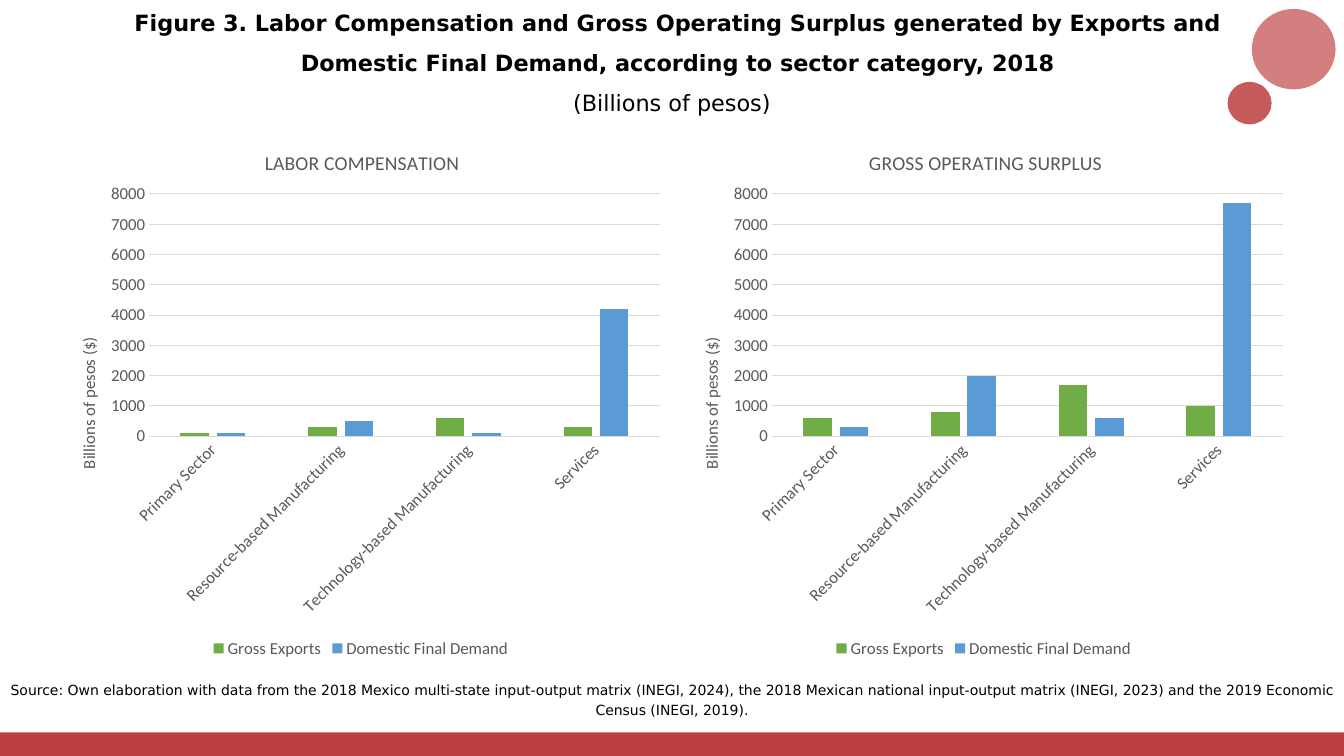
from lxml import etree
from pptx import Presentation
from pptx.chart.data import CategoryChartData
from pptx.dml.color import RGBColor
from pptx.enum.chart import XL_CHART_TYPE as ChartType, XL_LEGEND_POSITION as LegendPosition
from pptx.enum.chart import XL_TICK_MARK as TickMark
from pptx.enum.shapes import MSO_SHAPE as Shape
from pptx.enum.text import MSO_AUTO_SIZE as AutoSize, PP_ALIGN as Align
from pptx.oxml.ns import qn
from pptx.util import Pt

GRAY, GRID, RED = "595959", "D9D9D9", "A80000"
CATEGORIES = ["Primary Sector", "Resource-based Manufacturing",
              "Technology-based Manufacturing", "Services"]


def color(hex_value):
    return RGBColor.from_string(hex_value)


def set_layout(element, index, **fractions):
    """Place a chart part by fractions of the chart area."""
    for old_layout in element.findall(qn("c:layout")):
        element.remove(old_layout)
    layout = etree.Element(qn("c:layout"))
    manual = etree.SubElement(layout, qn("c:manualLayout"))
    if "w" in fractions:
        etree.SubElement(manual, qn("c:layoutTarget"), val="inner")
    for mode in ("xMode", "yMode"):
        etree.SubElement(manual, qn(f"c:{mode}"), val="edge")
    for name, value in fractions.items():
        etree.SubElement(manual, qn(f"c:{name}"), val=str(value))
    element.insert(index, layout)


presentation = Presentation()
presentation.slide_width, presentation.slide_height = Pt(960), Pt(540)
slide = presentation.slides.add_slide(presentation.slide_layouts[6])

# Red decoration: two circles and the bottom band, with opacity in percent
decorations = [
    (Shape.OVAL, 894.2, 6.4, 59.8, 57.5, 50),
    (Shape.OVAL, 876.8, 58.5, 31.5, 30.3, 65),
    (Shape.RECTANGLE, 0, 523.2, 960, 16.8, 75),
]
for kind, left, top, width, height, opacity in decorations:
    shape = slide.shapes.add_shape(kind, Pt(left), Pt(top), Pt(width), Pt(height))
    shape.shadow.inherit = False
    shape.line.fill.background()
    shape.fill.solid()
    shape.fill.fore_color.rgb = color(RED)
    fill_color = shape.fill._xPr.find(qn("a:solidFill"))[0]
    etree.SubElement(fill_color, qn("a:alpha"), val=str(opacity * 1000))

# Heading, unit and source
texts = [
    ("Figure 3. Labor Compensation and Gross Operating Surplus generated by Exports and "
     "Domestic Final Demand, according to sector category, 2018",
     77, -6.5, 814.3, 61.2, 1.5, {"size": Pt(16), "bold": True}),
    ("(Billions of pesos)", 240, 50.4, 480, 32.4, 1.5, {"size": Pt(16)}),
    ("Source: Own elaboration with data from the 2018 Mexico multi-state input-output matrix "
     "(INEGI, 2024), the 2018 Mexican national input-output matrix (INEGI, 2023) and the 2019 "
     "Economic Census (INEGI, 2019).",
     0, 481.7, 960, 33.8, 1.15, {"size": Pt(10)}),
]
for text, left, top, width, height, spacing, font_format in texts:
    frame = slide.shapes.add_textbox(Pt(left), Pt(top), Pt(width), Pt(height)).text_frame
    frame.word_wrap = True
    frame.auto_size = AutoSize.SHAPE_TO_FIT_TEXT
    paragraph = frame.paragraphs[0]
    paragraph.alignment = Align.CENTER
    paragraph.line_spacing = spacing
    paragraph.space_after = Pt(8)
    run = paragraph.add_run()
    run.text = text
    run.font.color.rgb = color("000000")
    for name, value in ({"name": "DejaVu Sans"} | font_format).items():
        setattr(run.font, name, value)

# Two column charts side by side
charts = [
    ("LABOR COMPENSATION", 35.3, 0.34, [100, 300, 600, 300], [100, 500, 100, 4200]),
    ("GROSS OPERATING SURPLUS", 480.2, 0.31, [600, 800, 1700, 1000], [300, 2000, 600, 7700]),
]
for title, left, title_x, exports, demand in charts:
    data = CategoryChartData()
    data.categories = CATEGORIES
    data.add_series("Gross Exports", exports)
    data.add_series("Domestic Final Demand", demand)
    chart = slide.shapes.add_chart(ChartType.COLUMN_CLUSTERED, Pt(left), Pt(88.6),
                                   Pt(445), Pt(384.5), data).chart
    chart.font.name, chart.font.size = "Calibri", Pt(12)
    chart.font.color.rgb = color(GRAY)

    plot = chart.plots[0]
    plot.gap_width, plot.overlap, plot.vary_by_categories = 219, -27, False
    for series, fill in zip(plot.series, ("70AD47", "5B9BD5")):
        series.format.fill.solid()
        series.format.fill.fore_color.rgb = color(fill)

    chart.has_legend = True
    chart.legend.position = LegendPosition.BOTTOM
    chart.legend.include_in_layout = False

    category_axis, value_axis = chart.category_axis, chart.value_axis
    value_axis.minimum_scale, value_axis.maximum_scale = 0, 8000
    value_axis.major_unit = 1000
    value_axis.format.line.fill.background()
    for line in (category_axis.format.line, value_axis.major_gridlines.format.line):
        line.width = Pt(0.75)
        line.color.rgb = color(GRID)
    for axis in (category_axis, value_axis):
        axis.major_tick_mark = axis.minor_tick_mark = TickMark.NONE
        axis.tick_labels.font.size = Pt(12)
        axis.tick_labels.font.color.rgb = color(GRAY)
    category_axis._element.txPr.bodyPr.set("rot", "-2700000")

    titles = [
        (chart.chart_title, title, 14, 0, title_x, 0.04),
        (value_axis.axis_title, "Billions of pesos ($)", 12, -5400000, 0.04, 0.39),
    ]
    for chart_title, text, size, rotation, x, y in titles:
        frame = chart_title.text_frame
        frame.text = text
        frame._txBody.bodyPr.set("rot", str(rotation))
        frame._txBody.bodyPr.set("vert", "horz")
        font = frame.paragraphs[0].runs[0].font
        font.name, font.size, font.bold = "Calibri", Pt(size), False
        font.color.rgb = color(GRAY)
        set_layout(chart_title._element, 1, x=x, y=y)
    plot_area = chart._chartSpace.chart.plotArea
    set_layout(plot_area, 0, x=0.16, y=0.13, w=0.82, h=0.45)

presentation.save("out.pptx")
